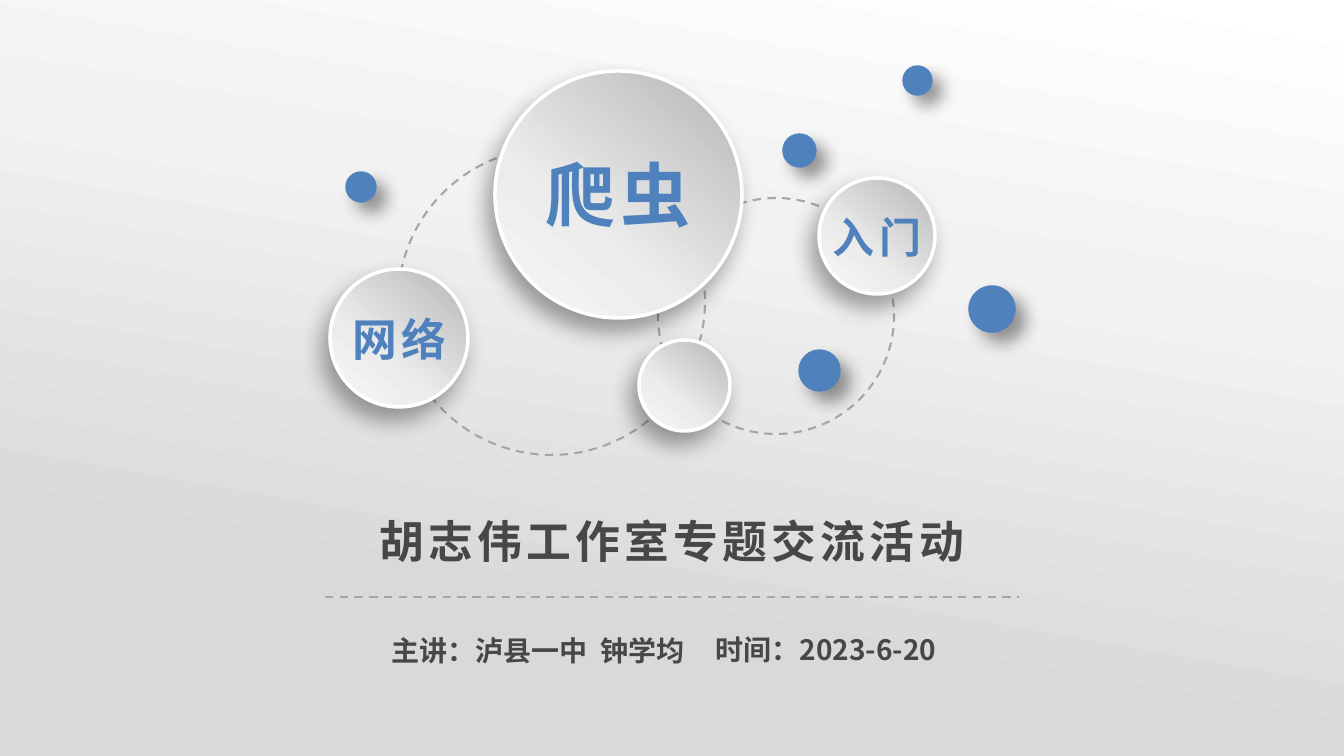
from lxml.etree import SubElement as Sub
from pptx import Presentation
from pptx.dml.color import RGBColor
from pptx.enum.dml import MSO_LINE as Dash
from pptx.enum.shapes import MSO_CONNECTOR as Link, MSO_SHAPE as Kind
from pptx.enum.text import MSO_ANCHOR as Anchor, MSO_AUTO_SIZE as Fit, PP_ALIGN as Align
from pptx.oxml.ns import qn
from pptx.util import Pt

FONT = "Noto Sans CJK SC"
BLUE, DARK, GREY = "4F81BD", "474747", "A6A6A6"
BACK = [(0, "FFFFFF"), (34, "F2F2F2"), (76, "D9D9D9")]
BALL = [(9, "BEBEBE"), (63, "ECECEC"), (100, "F7F7F7")]


def px(n):
    return round(n * 914400 / 100.8)


def rgb(code):
    return RGBColor.from_string(code)


class Deck:
    """Holds the style and the current slide, and draws each kind of element."""

    def __init__(self):
        self.file = Presentation()
        self.file.slide_width, self.file.slide_height = px(1344), px(756)
        self.slide = self.file.slides.add_slide(self.file.slide_layouts[0])
        self.shapes = self.slide.shapes

    def back(self, stops, angle):
        self.slide.background.fill.solid()
        self.blend(self.slide.element.find(".//" + qn("p:bgPr")), stops, angle)

    def blend(self, host, stops, angle):
        old = host.find(qn("a:solidFill"))
        grad = Sub(host, qn("a:gradFill"), rotWithShape="1")
        host.replace(old, grad)
        items = Sub(grad, qn("a:gsLst"))
        for spot, code in stops:
            stop = Sub(items, qn("a:gs"), pos=str(spot * 1000))
            Sub(stop, qn("a:srgbClr"), val=code)
        Sub(grad, qn("a:lin"), ang=str(angle * 60000), scaled="0")

    def shade(self, shape, code, blur, angle):
        host = shape.element.spPr.find(qn("a:effectLst"))
        drop = Sub(host, qn("a:outerShdw"), blurRad=str(Pt(blur)), dist=str(Pt(10)),
                   dir=str(angle * 60000), algn="ctr", rotWithShape="0")
        tone = Sub(drop, qn("a:srgbClr"), val=code)
        Sub(tone, qn("a:alpha"), val="40000")

    def disc(self, left, top, size, code, width):
        shape = self.shapes.add_shape(Kind.OVAL, px(left), px(top), px(size), px(size))
        shape.shadow.inherit = False
        shape.line.color.rgb, shape.line.width = rgb(code), Pt(width)
        return shape

    def ring(self, left, top, size):
        shape = self.disc(left, top, size, GREY, 1.5)
        shape.fill.background()
        shape.line.dash_style = Dash.DASH

    def ball(self, left, top, size):
        shape = self.disc(left, top, size, "FFFFFF", 2.5)
        shape.fill.solid()
        self.blend(shape.element.spPr, BALL, 130)
        self.shade(shape, "1A1A1A", 16, 120)

    def dot(self, left, top, size):
        shape = self.disc(left, top, size, BLUE, 1)
        shape.fill.solid()
        shape.fill.fore_color.rgb = rgb(BLUE)
        self.shade(shape, "000000", 12, 45)

    def rule(self, left, right, top):
        line = self.shapes.add_connector(Link.STRAIGHT, px(left), px(top), px(right), px(top))
        line.line.color.rgb, line.line.width = rgb(GREY), Pt(1.5)
        line.line.dash_style = Dash.DASH
        Sub(line.element.spPr, qn("a:effectLst"))

    def text(self, words, area, size, code, gap=0, wrap=True, shape=None):
        place = [px(n) for n in area]
        shape = shape or self.shapes.add_textbox(*place)
        shape.left, shape.top, shape.width, shape.height = place
        frame = shape.text_frame
        frame.text = words
        frame.word_wrap, frame.auto_size = wrap, Fit.SHAPE_TO_FIT_TEXT
        frame.vertical_anchor = Anchor.MIDDLE if wrap else Anchor.TOP
        para = frame.paragraphs[0]
        para.alignment, para.space_before = Align.CENTER, Pt(0)
        run = para.runs[0]
        font = run.font
        font.name, font.size, font.bold = FONT, Pt(size), True
        font.color.rgb = rgb(code)
        props = run.font._element
        props.set("spc", str(gap * 100))
        Sub(props, qn("a:ea"), typeface=FONT)


def main():
    deck = Deck()
    deck.back(BACK, 100)
    for spot in [(658, 198, 236), (398, 148, 307)]:
        deck.ring(*spot)
    for spot in [(969, 286, 46), (783, 134, 33), (346, 172, 30), (799, 350, 41), (903, 66, 29)]:
        deck.dot(*spot)
    deck.ball(639, 340, 91)
    for spot, words, area, size in [
        ((495, 71, 247), "爬虫", (533, 146, 170, 95), 50),
        ((819, 178, 116), "入门", (816, 206, 122, 61), 30),
        ((330, 269, 138), "网络", (338, 306, 122, 65), 32),
    ]:
        deck.ball(*spot)
        deck.text(words, area, size, BLUE, gap=3)
    title, lead = deck.slide.placeholders
    deck.text("胡志伟工作室专题交流活动", (312, 508, 720, 65), 32, DARK, gap=3, shape=title)
    deck.rule(325, 1019, 597)
    deck.text("主讲：泸县一中  钟学均", (378, 628, 320, 44), 20, DARK, wrap=False, shape=lead)
    deck.text("时间：2023-6-20", (700, 628, 252, 44), 20, DARK, wrap=False)
    deck.file.save("out.pptx")


if __name__ == "__main__":
    main()
